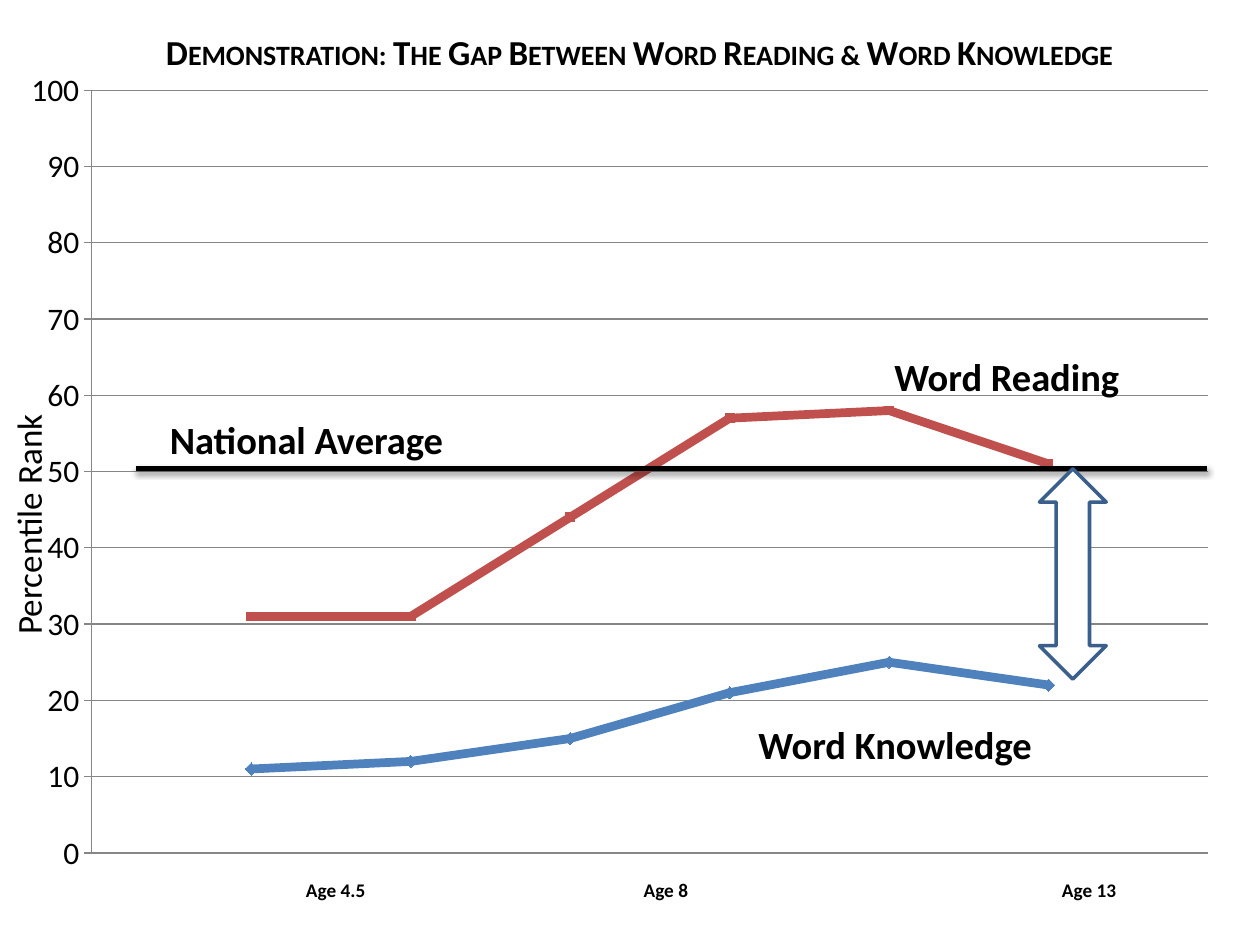
from dataclasses import dataclass

from lxml import etree
from pptx import Presentation
from pptx.chart.data import XyChartData
from pptx.dml.color import RGBColor
from pptx.enum import chart as c, shapes, text
from pptx.oxml import parse_xml
from pptx.oxml.ns import nsdecls, qn
from pptx.util import Inches, Pt

COLORS = {
    "black": "000000",
    "white": "FFFFFF",
    "blue": "4F81BD",
    "red": "C0504D",
    "grid": "868686",
    "outline": "3A5F8C",
}
FONT = "Calibri"


@dataclass
class Curve:
    name: str
    values: list[int]
    color: str
    marker: c.XL_MARKER_STYLE
    marker_size: int


@dataclass
class Label:
    words: str
    left: float
    top: float
    width: float


CURVES = [
    Curve("Series 1", [11, 12, 15, 21, 25, 22], "blue", c.XL_MARKER_STYLE.DIAMOND, 7),
    Curve("Series 2", [31, 31, 44, 57, 58, 51], "red", c.XL_MARKER_STYLE.SQUARE, 5),
]
LABELS = [
    Label("Word Reading", 7, 2.75, 2.01),
    Label("Word Knowledge", 5.92, 5.67, 2.4),
    Label("National Average", 1.25, 3.25, 2.4),
]
AGE_TABS = {"Age 4.5": 2.0, "Age 8": 4.68, "Age 13": 8.0}


def rgb(name: str) -> RGBColor:
    return RGBColor.from_string(COLORS[name])


def add_text(slide, words: str, left: float, top: float, width: float, height: float,
             *, size: float, bold: bool = False, small_caps: bool = False,
             align=text.PP_ALIGN.LEFT, wrap: bool = True, rotation: float = 0,
             tabs: tuple[float, ...] = ()) -> None:
    box = slide.shapes.add_textbox(Inches(left), Inches(top), Inches(width), Inches(height))
    box.rotation = rotation
    box.text_frame.word_wrap = wrap
    paragraph = box.text_frame.paragraphs[0]
    paragraph.alignment = align
    if tabs:
        tab_list = etree.SubElement(paragraph._p.get_or_add_pPr(), qn("a:tabLst"))
        for position in tabs:
            etree.SubElement(tab_list, qn("a:tab"), pos=str(Inches(position)), algn="l")
    run = paragraph.add_run()
    run.text = words
    run.font.name = FONT
    run.font.size = Pt(size)
    run.font.bold = bold
    run.font.color.rgb = rgb("black")
    if small_caps:
        run.font._element.set("cap", "small")


def set_plot_area(chart, left: float, top: float, width: float, height: float) -> None:
    """Fix the inner plot area, in fractions of the chart's size."""
    plot_area = chart._chartSpace.chart.plotArea
    for old in plot_area.findall(qn("c:layout")):
        plot_area.remove(old)
    places = "".join(f'<c:{tag} val="{value}"/>' for tag, value in
                     zip("xywh", (left, top, width, height)))
    plot_area.insert(0, parse_xml(
        f'<c:layout {nsdecls("c")}><c:manualLayout><c:layoutTarget val="inner"/>'
        f'<c:xMode val="edge"/><c:yMode val="edge"/>{places}'
        f'</c:manualLayout></c:layout>'))


def add_percentile_chart(slide) -> None:
    data = XyChartData()
    for curve in CURVES:
        points = data.add_series(curve.name)
        for position, value in enumerate(curve.values, start=1):
            points.add_data_point(position, value)
    chart = slide.shapes.add_chart(c.XL_CHART_TYPE.XY_SCATTER_SMOOTH, Inches(0.22),
                                   Inches(0.5), Inches(9.58), Inches(6.42), data).chart
    chart.has_legend = False
    chart.has_title = False
    chart.font.name = FONT
    chart.font.size = Pt(18)
    chart.font.color.rgb = rgb("black")
    chart.plots[0].vary_by_categories = False
    set_plot_area(chart, 0.053, 0.034, 0.925, 0.95)

    ages = chart.category_axis
    ages.minimum_scale, ages.maximum_scale = 0, 7
    ages.has_major_gridlines = False
    ages.visible = False

    ranks = chart.value_axis
    ranks.minimum_scale, ranks.maximum_scale, ranks.major_unit = 0, 100, 10
    ranks.major_tick_mark = c.XL_TICK_MARK.CROSS
    ranks.minor_tick_mark = c.XL_TICK_MARK.NONE
    ranks.has_major_gridlines = True
    for line in (ranks.format.line, ranks.major_gridlines.format.line):
        line.color.rgb = rgb("grid")
        line.width = Pt(0.75)

    for series, curve in zip(chart.plots[0].series, CURVES):
        series.smooth = True
        series.format.line.color.rgb = rgb(curve.color)
        series.format.line.width = Pt(5)
        series.marker.style = curve.marker
        series.marker.size = curve.marker_size
        series.marker.format.fill.solid()
        series.marker.format.fill.fore_color.rgb = rgb(curve.color)
        series.marker.format.line.color.rgb = rgb(curve.color)


def add_average_line(slide) -> None:
    line = slide.shapes.add_connector(shapes.MSO_CONNECTOR.STRAIGHT, Inches(1.08),
                                      Inches(3.72), Inches(9.58), Inches(3.72))
    line.line.color.rgb = rgb("black")
    line.line.width = Pt(3)
    line._element.spPr.append(parse_xml(
        f'<a:effectLst {nsdecls("a")}><a:outerShdw blurRad="{Pt(3.1)}" dist="{Pt(1.8)}" '
        f'dir="5400000" rotWithShape="0"><a:srgbClr val="{COLORS["black"]}">'
        f'<a:alpha val="35000"/></a:srgbClr></a:outerShdw></a:effectLst>'))


def add_gap_arrow(slide) -> None:
    arrow = slide.shapes.add_shape(shapes.MSO_SHAPE.UP_DOWN_ARROW, Inches(8.25),
                                   Inches(3.72), Inches(0.53), Inches(1.67))
    arrow.shadow.inherit = False
    arrow.fill.solid()
    arrow.fill.fore_color.rgb = rgb("white")
    arrow.line.color.rgb = rgb("outline")
    arrow.line.width = Pt(2)


def main() -> None:
    presentation = Presentation()
    presentation.slide_width, presentation.slide_height = Inches(10), Inches(7.5)
    slide = presentation.slides.add_slide(presentation.slide_layouts[6])

    add_text(slide, "Demonstration: The Gap Between Word Reading & Word Knowledge",
             0.34, 0.19, 9.47, 0.44, size=20, bold=True, small_caps=True,
             align=text.PP_ALIGN.CENTER)
    add_text(slide, "".join(f"\t{age}" for age in AGE_TABS), 0.33, 6.92, 9.47, 0.47,
             size=11, bold=True, tabs=tuple(AGE_TABS.values()))
    add_percentile_chart(slide)
    add_average_line(slide)
    for label in LABELS:
        add_text(slide, label.words, label.left, label.top, label.width, 0.47,
                 size=22, bold=True, wrap=False)
    add_gap_arrow(slide)
    add_text(slide, "Percentile Rank", -1.19, 3.5, 2.83, 0.44, size=20, rotation=270)
    presentation.save("out.pptx")


if __name__ == "__main__":
    main()
